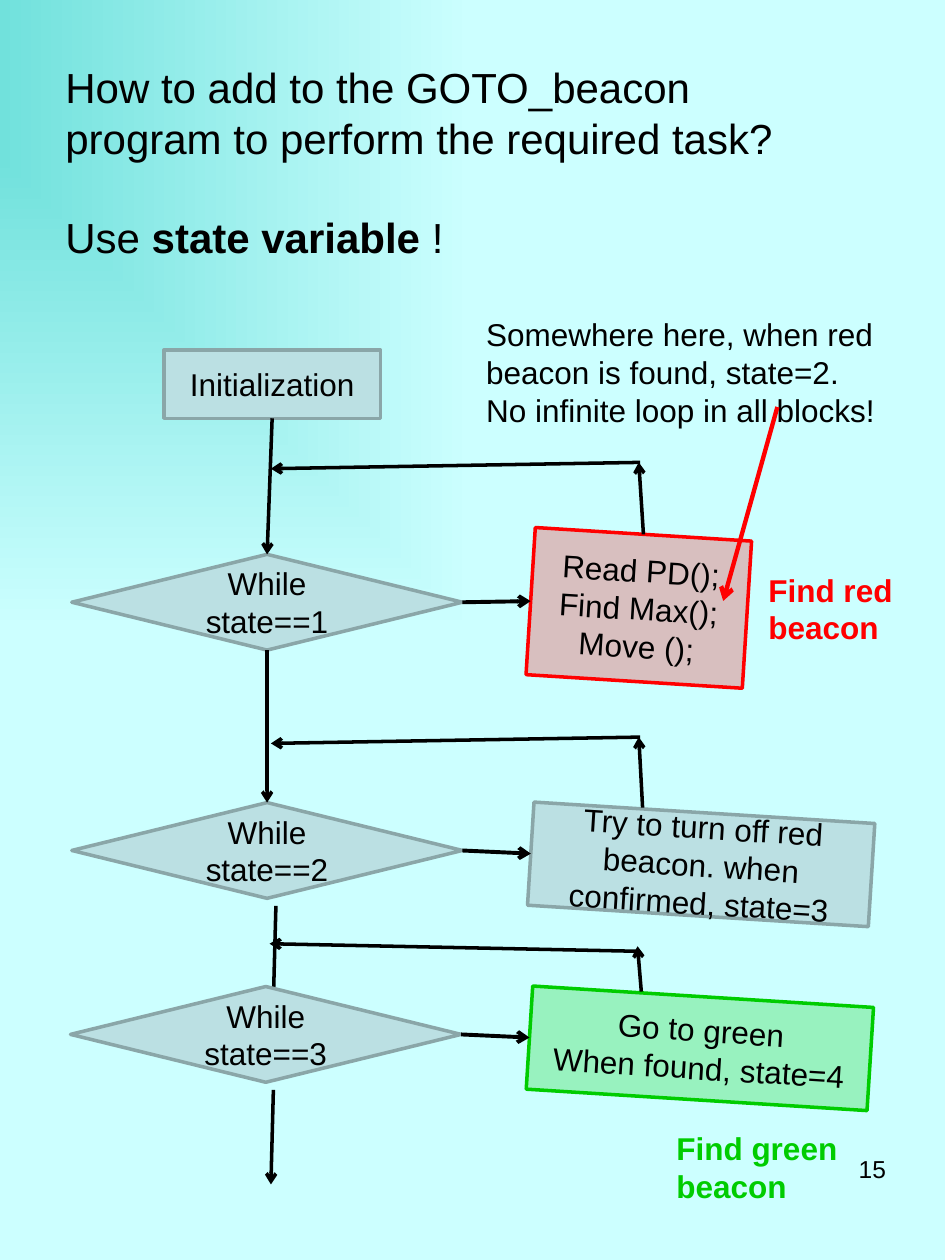
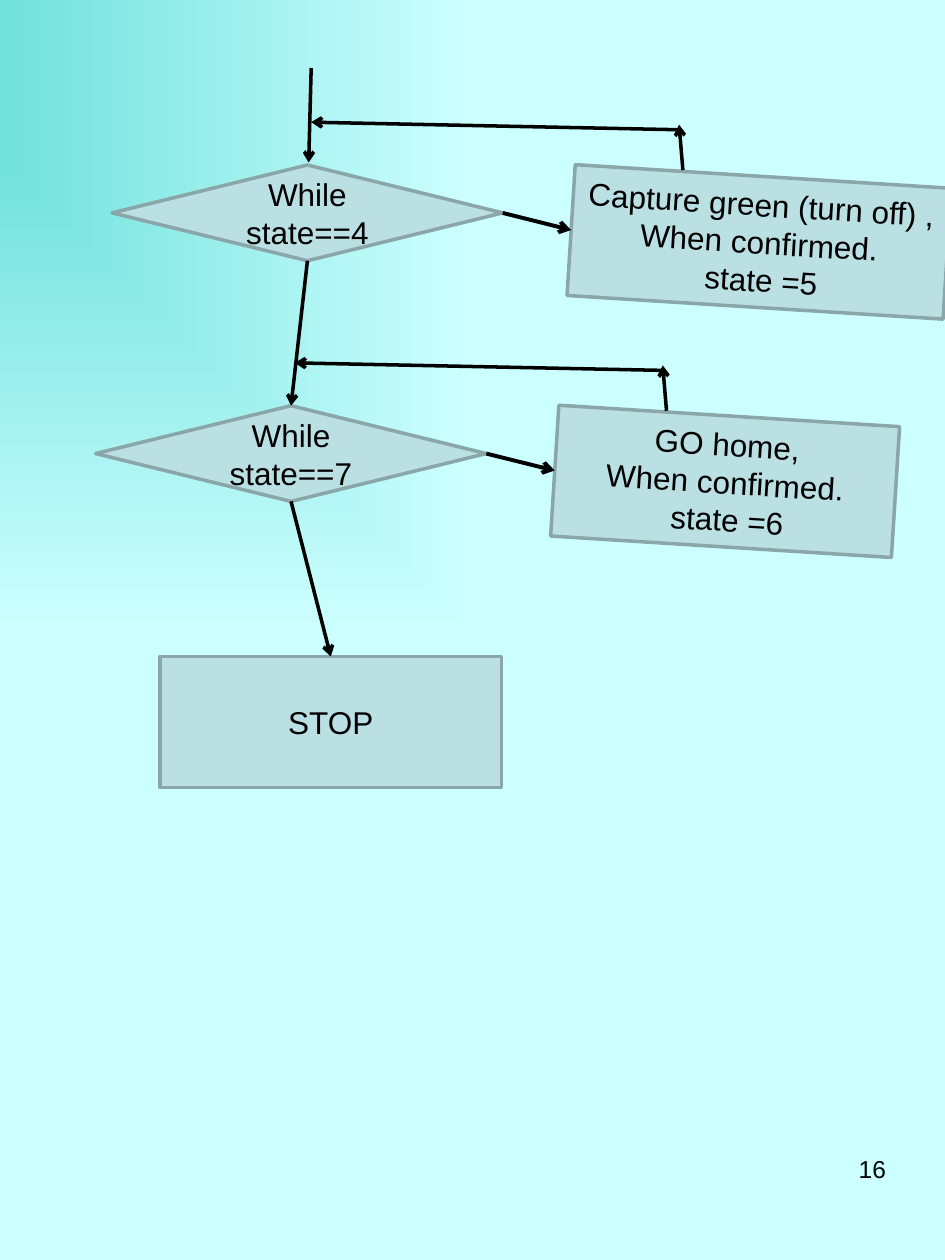
from math import cos, radians, sin

from lxml.etree import SubElement
from pptx import Presentation
from pptx.dml.color import RGBColor
from pptx.enum.shapes import MSO_CONNECTOR, MSO_SHAPE
from pptx.enum.text import MSO_ANCHOR, PP_ALIGN
from pptx.oxml.ns import qn
from pptx.util import Inches, Pt

FONT = "Arial"
BLACK, RED, GREEN = "000000", "FF0000", "00CC00"
PALE, EDGE = "BBE0E3", "8AA6A8"
BACKDROP = ("71E1DC", "CCFFFF")
TILT = 3.6
DIAMOND_W, DIAMOND_H = 3.1, 0.76
BOX_DX = 3.64
TOP, LEFT, BOTTOM, RIGHT = range(4)

# Heights relative to the diamond's top: arrow tip, start and end of the way back
LOW_LOOP = (-0.32, -0.28, -0.34)

# state, diamond left and top, box drop, box width and height, box lines, tint, loop
# terminals: text, left, top, width, height
# loose arrows: start, end; links: pairs of nodes joined bottom to top
# notes: paragraphs of (text, bold) runs, left, top, width, height, size, colour
SLIDES = [
    {
        "number": "15",
        "loose": [((2.19, 7.19), (2.17, 7.94)), ((2.17, 8.65), (2.15, 9.4))],
        "terminals": [("Initialization", 1.3, 2.78, 1.72, 0.54)],
        "stages": [
            (1, 0.57, 4.4, -0.16, 1.72, 1.17,
             ["Read PD();", "Find Max();", "Move ();"], RED, (-0.73, -0.73, -0.68)),
            (2, 0.57, 6.37, 0.08, 2.71, 0.82,
             ["Try to turn off red beacon. when confirmed, state=3"],
             None, (-0.52, -0.52, -0.47)),
            (3, 0.56, 7.83, 0.08, 2.71, 0.82,
             ["Go to green", "When found, state=4"], GREEN, LOW_LOOP),
        ],
        "links": [("Initialization", 1), (1, 2)],
        "notes": [
            ([[("How to add to the GOTO_beacon program to perform the required task?", False)],
              [("Use ", False), ("state variable ", True), ("!", False)]],
             0.42, 0.44, 6.31, 1.72, 24, BLACK),
            ([[("Somewhere here, when red beacon is found, state=2.", False)],
              [("No infinite loop in all blocks!", False)]],
             3.76, 2.45, 3.44, 1.01, 18, BLACK),
            ([[("Find red beacon", True)]], 6, 4.48, 1.32, 0.71, 18, RED),
            ([[("Find green beacon", True)]], 5.27, 8.91, 1.61, 0.71, 18, GREEN),
        ],
        "pointer": ((6.17, 3.23), (5.74, 4.77)),
    },
    {
        "number": "16",
        "loose": [((2.47, 0.54), (2.45, 1.29))],
        "terminals": [("STOP", 1.27, 5.21, 2.71, 1.04)],
        "stages": [
            (4, 0.89, 1.31, 0.09, 2.99, 1.04,
             ["Capture green (turn off) ,", "When confirmed.", " state =5"], None, LOW_LOOP),
            (7, 0.76, 3.22, 0.08, 2.71, 1.04,
             ["GO home,", "When confirmed.", " state =6"], None, LOW_LOOP),
        ],
        "links": [(4, 7), (7, "STOP")],
        "notes": [],
        "pointer": None,
    },
]


def rgb(color):
    return RGBColor.from_string(color)


def write(tf, paragraphs, size=18, color=BLACK, align=PP_ALIGN.LEFT):
    """Fill a text frame from paragraphs given as lists of (text, bold) runs."""
    tf.word_wrap = True
    for i, runs in enumerate(paragraphs):
        p = tf.add_paragraph() if i else tf.paragraphs[0]
        p.alignment = align
        for text, bold in runs:
            r = p.add_run()
            r.text = text
            r.font.name, r.font.size, r.font.bold = FONT, Pt(size), bold
            r.font.color.rgb = rgb(color)


def add_note(s, paragraphs, left, top, width, height, size, color, align=PP_ALIGN.LEFT):
    box = s.shapes.add_textbox(*map(Inches, (left, top, width, height)))
    write(box.text_frame, paragraphs, size, color, align)
    return box


def add_node(s, kind, lines, left, top, width, height, tint=None, tilt=0):
    sp = s.shapes.add_shape(kind, *map(Inches, (left, top, width, height)))
    sp.shadow.inherit = False
    sp.rotation = tilt
    sp.fill.solid()
    sp.fill.fore_color.rgb = rgb(tint or PALE)
    if tint:
        clr = sp.element.spPr.find(qn("a:solidFill")).find(qn("a:srgbClr"))
        SubElement(clr, qn("a:alpha"), val="25000")
    sp.line.color.rgb = rgb(tint or EDGE)
    sp.line.width = Pt(2)
    sp.text_frame.vertical_anchor = MSO_ANCHOR.MIDDLE
    write(sp.text_frame, [[(line, False)] for line in lines], align=PP_ALIGN.CENTER)
    return sp


def side_point(sp, side):
    """Middle of a side in inches, after rotation."""
    dx = {LEFT: -sp.width, RIGHT: sp.width}.get(side, 0) / 2
    dy = {TOP: -sp.height, BOTTOM: sp.height}.get(side, 0) / 2
    a = radians(sp.rotation)
    x = sp.left + sp.width / 2 + dx * cos(a) - dy * sin(a)
    y = sp.top + sp.height / 2 + dx * sin(a) + dy * cos(a)
    return x / Inches(1), y / Inches(1)


def add_arrow(s, start, end, color=BLACK, width=2):
    """Each end is an (x, y) point or a (shape, side) pair to join."""
    ends = [e if isinstance(e[0], (int, float)) else side_point(*e) for e in (start, end)]
    (x1, y1), (x2, y2) = [tuple(map(Inches, e)) for e in ends]
    c = s.shapes.add_connector(MSO_CONNECTOR.STRAIGHT, x1, y1, x2, y2)
    if ends[0] is not start:
        c.begin_connect(*start)
    if ends[1] is not end:
        c.end_connect(*end)
    # Joining ignores rotation, so the true ends are set again
    c.begin_x, c.begin_y, c.end_x, c.end_y = x1, y1, x2, y2
    c.line.color.rgb = rgb(color)
    c.line.width = Pt(width)
    SubElement(c.line._get_or_add_ln(), qn("a:tailEnd"), type="arrow")
    SubElement(c.element.spPr, qn("a:effectLst"))


def add_stage(s, state, left, top, drop, width, height, lines, tint, loop):
    """Draw a state test, its action box and the loop back; return the test."""
    test = add_node(s, MSO_SHAPE.FLOWCHART_DECISION, [f"While state=={state}"],
                    left, top, DIAMOND_W, DIAMOND_H)
    action = add_node(s, MSO_SHAPE.FLOWCHART_PROCESS, lines,
                      left + BOX_DX, top + drop, width, height, tint, TILT)
    add_arrow(s, (test, RIGHT), (action, LEFT), width=2.25)
    tip, back_start, back_end = (top + dy for dy in loop)
    foot = (action, TOP) if drop < 0 else (left + 4.53, top + 0.04)
    add_arrow(s, foot, (left + 4.5, tip))
    add_arrow(s, (left + 4.51, back_start), (left + 1.58, back_end))
    return test


def set_backdrop(master):
    fill = master.background.fill
    fill.gradient()
    for stop, color in zip(fill.gradient_stops, BACKDROP):
        stop.color.rgb = rgb(color)
    grad = next(master.element.cSld.iter(qn("a:gradFill")))
    grad.remove(grad.find(qn("a:lin")))
    corner = SubElement(grad, qn("a:path"))
    corner.set("path", "rect")
    SubElement(corner, qn("a:fillToRect"), r="100000", b="100000")


def build_slide(prs, content):
    s = prs.slides.add_slide(prs.slide_layouts[6])
    for start, end in content["loose"]:
        add_arrow(s, start, end)
    nodes = {}
    for text, *place in content["terminals"]:
        nodes[text] = add_node(s, MSO_SHAPE.FLOWCHART_PROCESS, [text], *place)
    for stage in content["stages"]:
        nodes[stage[0]] = add_stage(s, *stage)
    for upper, lower in content["links"]:
        add_arrow(s, (nodes[upper], BOTTOM), (nodes[lower], TOP))
    for note in content["notes"]:
        box = add_note(s, *note)
        if note[5] == 24:
            box.text_frame.paragraphs[-1].space_before = Pt(28)
    if content["pointer"]:
        add_arrow(s, *content["pointer"], color=RED, width=2.5)
    add_note(s, [[(content["number"], False)]], 5.38, 9.11, 1.75, 0.69, 14, BLACK,
             PP_ALIGN.RIGHT)


def main():
    prs = Presentation()
    prs.slide_width, prs.slide_height = Inches(7.5), Inches(10)
    set_backdrop(prs.slide_master)
    for content in SLIDES:
        build_slide(prs, content)
    prs.save("out.pptx")


if __name__ == "__main__":
    main()
